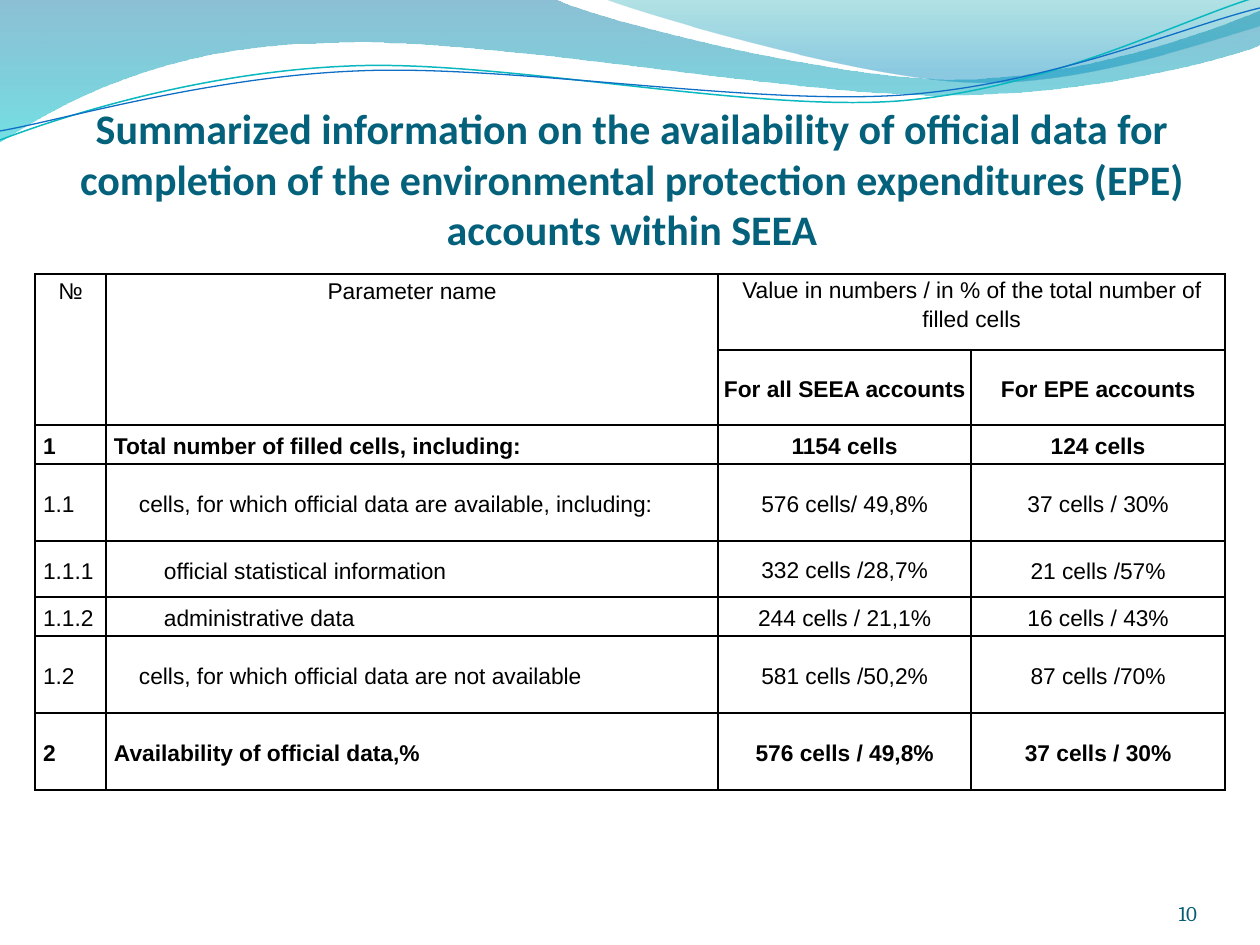
"""Builds the slide on availability of official data for EPE accounts."""
from dataclasses import dataclass

from lxml import etree
from pptx import Presentation
from pptx import util as u
from pptx.dml.color import RGBColor
from pptx.enum import text
from pptx.oxml.ns import qn

PX = 914400 / 126


@dataclass(frozen=True)
class Theme:
    title: str = "04617B"
    number: str = "045D75"
    ink: str = "000000"
    title_size: int = 24
    number_size: int = 12
    cell_size: int = 13
    border: float = 1.5


T = Theme()


def px(*lengths):
    return [u.Emu(round(n * PX)) for n in lengths]


def style(p, align, font, size, color, bold=False):
    p.alignment = align
    for r in p.runs:
        r.font.name, r.font.size, r.font.bold = font, u.Pt(size), bold
        r.font.color.rgb = RGBColor.from_string(color)


WAVES = [
    ((0, 0), [(554, -1), (600, 21, 837, 79, 955, 79), (1075, 79, 1207, 33, 1260, 11),
              (1261, 45), (1239, 55, 1096, 96, 940, 95), (783, 95, 481, 35, 324, 43),
              (163, 45, 58, 105, -1, 142), (0, 0)],
     [(0, "0074A1", 45), (1, "00C6CF", 55)], None),
    ((604, -1), [(641, 14, 859, 78, 969, 82), (1079, 87, 1211, 40, 1260, 26),
                 (1260, 0), (604, -1)],
     [(0, "00A1A9", 30), (0.8, "008BBF", 45)], None),
    ((0, 140), [(60, 117, 199, 72, 349, 66), (498, 59, 747, 112, 898, 101),
                (1050, 89, 1182, 19, 1257, -3)], None, ("0AB8BF", 0.85)),
    ((0, 131), [(59, 121, 207, 77, 357, 71), (508, 64, 752, 106, 903, 95),
                (1053, 84, 1185, 26, 1260, 8)], None, ("0F6FC6", 0.75)),
]

prs = Presentation()
prs.slide_width, prs.slide_height = px(1260, 945)
s = prs.slides.add_slide(prs.slide_layouts[5])

for start, segments, stops, line in WAVES:
    points = [px(*seg[k:k + 2]) for seg in segments for k in range(0, len(seg), 2)]
    builder = s.shapes.build_freeform(*px(*start))
    builder.add_line_segments(points, close=stops is not None)
    sp = builder.convert_to_shape()
    sp.shadow.inherit = False
    steps = iter(list(sp.element.iter(qn("a:lnTo"))))
    for seg in segments:
        step = next(steps)
        if len(seg) == 6:
            curve = etree.Element(qn("a:cubicBezTo"))
            step.addprevious(curve)
            for part in (step, next(steps), next(steps)):
                curve.append(part[0])
                part.getparent().remove(part)
    if stops:
        sp.line.fill.background()
        sp.fill.gradient()
        sp.fill.gradient_angle = 270
        for stop, (pos, color, opacity) in zip(sp.fill.gradient_stops, stops):
            stop.position = pos
            stop.color.rgb = RGBColor.from_string(color)
        for clr, (pos, color, opacity) in zip(sp.element.spPr.iter(qn("a:srgbClr")), stops):
            etree.SubElement(clr, qn("a:alpha"), val=str(opacity * 1000))
    else:
        sp.fill.background()
        sp.line.color.rgb = RGBColor.from_string(line[0])
        sp.line.width = u.Pt(line[1])

title = s.shapes.title
title.element.getparent().append(title.element)
title.left, title.top, title.width, title.height = px(55, 116, 1154, 138)
number = s.shapes.add_textbox(*px(1092, 876, 105, 50))
for sp, words, inset, look in [
    (title, "Summarized information on the availability of official data for completion of "
     "the environmental protection expenditures (EPE) accounts within SEEA", 6,
     (text.PP_ALIGN.CENTER, "Calibri", T.title_size, T.title, True)),
    (number, "10", 0, (text.PP_ALIGN.RIGHT, "Cambria", T.number_size, T.number)),
]:
    tf = sp.text_frame
    tf.text = words
    tf.word_wrap = True
    tf.auto_size = text.MSO_AUTO_SIZE.NONE
    tf.vertical_anchor = text.MSO_ANCHOR.BOTTOM
    tf.margin_left = tf.margin_right = tf.margin_bottom = 0
    tf.margin_top = px(inset)[0]
    style(tf.paragraphs[0], *look)

ROWS = [
    ("№", "Parameter name", "Value in numbers / in % of the total number of filled cells", ""),
    ("", "", "For all SEEA accounts", "For EPE accounts"),
    ("1", "Total number of filled cells, including:", "1154 cells", "124 cells"),
    ("1.1", "cells, for which official data are available, including:",
     "576 cells/ 49,8%", "37 cells / 30%"),
    ("1.1.1", "official statistical information", "332 cells /28,7%", "21 cells /57%"),
    ("1.1.2", "administrative data", "244 cells / 21,1%", "16 cells / 43%"),
    ("1.2", "cells, for which official data are not available",
     "581 cells /50,2%", "87 cells /70%"),
    ("2", "Availability of official data,%", "576 cells / 49,8%", "37 cells / 30%"),
]
COLS = (71, 612, 253, 254)
HEIGHTS = (76, 75, 39, 77, 56, 39, 77, 77)
BOLD_ROWS = (1, 2, 7)

table = s.shapes.add_table(len(ROWS), len(COLS), *px(35, 274, sum(COLS), sum(HEIGHTS))).table
table.first_row = table.horz_banding = False
for column, width in zip(table.columns, px(*COLS)):
    column.width = width
for row, height in zip(table.rows, px(*HEIGHTS)):
    row.height = height
for first, last in [((0, 0), (1, 0)), ((0, 1), (1, 1)), ((0, 2), (0, 3))]:
    table.cell(*first).merge(table.cell(*last))

for i, values in enumerate(ROWS):
    for j, value in enumerate(values):
        cell = table.cell(i, j)
        cell.fill.background()
        side, top = (0, 0) if j == 2 else (8, 1)
        cell.margin_left, cell.margin_right, cell.margin_top, cell.margin_bottom = px(
            side, side, top, 0)
        cell.vertical_anchor = text.MSO_ANCHOR.MIDDLE if i else text.MSO_ANCHOR.TOP
        tcPr = cell._tc.get_or_add_tcPr()
        for k, edge in enumerate(("a:lnL", "a:lnR", "a:lnT", "a:lnB")):
            ln = etree.Element(qn(edge), w=str(u.Pt(T.border)))
            fill = etree.SubElement(ln, qn("a:solidFill"))
            etree.SubElement(fill, qn("a:srgbClr"), val=T.ink)
            tcPr.insert(k, ln)
        if not value:
            continue
        cell.text_frame.text = value
        p = cell.text_frame.paragraphs[0]
        p.line_spacing = 1.15
        align = text.PP_ALIGN.JUSTIFY if i > 1 and j < 2 else text.PP_ALIGN.CENTER
        style(p, align, "Arial", T.cell_size, T.ink, i in BOLD_ROWS)
        if j == 1 and i > 1:
            level = values[0].count(".")
            p._p.get_or_add_pPr().set("marL", str(px(25 * level)[0]))

prs.save("out.pptx")
